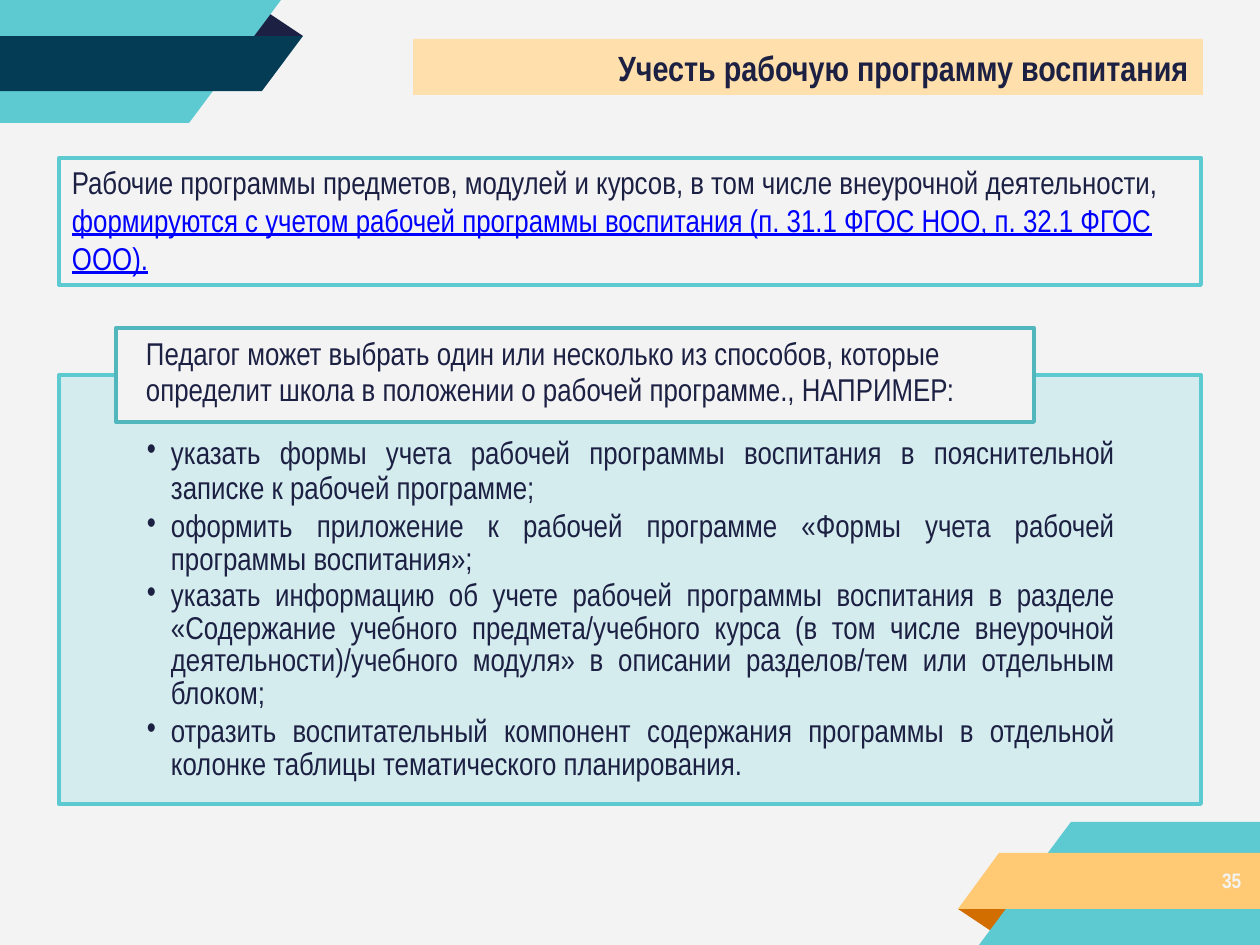
from lxml import etree
from pptx import Presentation
from pptx.dml.color import RGBColor
from pptx.enum.shapes import MSO_SHAPE
from pptx.enum.text import MSO_ANCHOR, MSO_AUTO_SIZE, PP_ALIGN
from pptx.oxml.ns import qn
from pptx.util import Pt

RECT = MSO_SHAPE.RECTANGLE
TOP = MSO_ANCHOR.TOP
FIXED = MSO_AUTO_SIZE.NONE
LEFT, JUST = PP_ALIGN.LEFT, PP_ALIGN.JUSTIFY
PX = 914400 / 126
FACE = "Arial Narrow"
INK, PALE, TEAL = "1C2043", "F3F3F3", "5DC9D1"
color = RGBColor.from_string


def place(shape, box, fill=None, line=None):
    shape.left, shape.top, shape.width, shape.height = [round(n * PX) for n in box]
    if fill:
        shape.fill.solid()
        shape.fill.fore_color.rgb = color(fill)
    if line:
        shape.line.color.rgb = color(line)
        shape.line.width = Pt(2.25)


def write(shape, text, inset, size=18, bold=False, tint=INK):
    frame = shape.text_frame
    frame.text = text
    frame.word_wrap = True
    frame.auto_size = FIXED
    frame.vertical_anchor = TOP
    frame.margin_left, frame.margin_top = [round(n * PX) for n in inset]
    frame.margin_right = frame.margin_bottom = 0
    for para in frame.paragraphs:
        para.alignment = LEFT
        for run in para.runs:
            run.font.name = FACE
            run.font.size = Pt(size)
            run.font.bold = bold
            run.font.color.rgb = color(tint)
    return frame.paragraphs


prs = Presentation()
prs.slide_width, prs.slide_height = round(1260 * PX), round(945 * PX)
slide = prs.slides.add_slide(prs.slide_layouts[5])
shapes = slide.shapes

bands = [
    (PALE, [(0, 0), (1260, 0), (1260, 945), (0, 945)]),
    (INK, [(267, 12), (249, 36), (303, 36)]),
    (TEAL, [(0, 0), (281, 0), (189, 123), (0, 123)]),
    ("043C56", [(0, 36), (303, 36), (262, 91), (0, 91)]),
    ("D26E00", [(958, 909), (1012, 909), (994, 933)]),
    (TEAL, [(1071, 822), (1260, 822), (1260, 945), (979, 945)]),
    ("FFCA73", [(999, 853), (1260, 853), (1260, 909), (958, 909)]),
]
for fill, points in bands:
    pen = shapes.build_freeform(*points[0], scale=PX)
    pen.add_line_segments(points[1:])
    band = pen.convert_to_shape()
    band.shadow.inherit = False
    band.fill.solid()
    band.fill.fore_color.rgb = color(fill)
    band.line.fill.background()

title = shapes.title
band._element.addnext(title._element)
place(title, (413, 39, 790, 56), "FFDFAB")
write(title, "Учесть рабочую программу воспитания", (205, 7), 20, True)

boxes = []
for box, fill, line in [
    ((59, 158, 1142, 127), PALE, TEAL),
    ((59, 375, 1142, 429), "D5ECEE", TEAL),
    ((116, 328, 918, 94), PALE, "52B7BC"),
]:
    shape = shapes.add_shape(RECT, 0, 0, 0, 0)
    shape.shadow.inherit = False
    place(shape, box, fill, line)
    boxes.append(shape)

para = write(boxes[0], "Рабочие программы предметов, модулей и курсов, "
             "в том числе внеурочной деятельности, ", (13, 5))[0]
rule = para.add_run()
rule.text = ("формируются с учетом рабочей программы воспитания "
             "(п. 31.1 ФГОС НОО, п. 32.1 ФГОС ООО).")
rule.font.name = FACE
rule.font.size = Pt(18)
rule.font.underline = True
rule.font.color.rgb = color("0000FF")

lines = [
    ("Педагог может выбрать один или несколько из способов, которые", 20.1, 0),
    ("определит школа в положении о рабочей программе., НАПРИМЕР:", 20.1, 0),
    ("указать формы учета рабочей программы воспитания в пояснительной "
     "записке к рабочей программе;", 20.1, 16.1),
    ("оформить приложение к рабочей программе «Формы учета рабочей "
     "программы воспитания»;", 18.6, 3.3),
    ("указать информацию об учете рабочей программы воспитания в разделе "
     "«Содержание учебного предмета/учебного курса (в том числе внеурочной "
     "деятельности)/учебного модуля» в описании разделов/тем или отдельным "
     "блоком;", 18.6, 2.2),
    ("отразить воспитательный компонент содержания программы в отдельной "
     "колонке таблицы тематического планирования.", 18.6, 3.2),
]
body = shapes.add_textbox(0, 0, 0, 0)
place(body, (145, 335, 970, 449))
paras = write(body, "\n".join(line[0] for line in lines), (1, 2))
for para, (_, pitch, gap) in zip(paras, lines):
    para.line_spacing = Pt(pitch)
    para.space_before = Pt(gap)
for para in paras[2:]:
    para.alignment = JUST
    props = para._p.get_or_add_pPr()
    props.set("marL", str(round(25 * PX)))
    props.set("indent", str(round(-24 * PX)))
    etree.SubElement(props, qn("a:buFont")).set("typeface", FACE)
    etree.SubElement(props, qn("a:buChar")).set("char", "•")

page = shapes.add_textbox(0, 0, 0, 0)
place(page, (1217, 868, 32, 28))
write(page, "35", (5, 0), 12, True, PALE)

prs.save("out.pptx")
